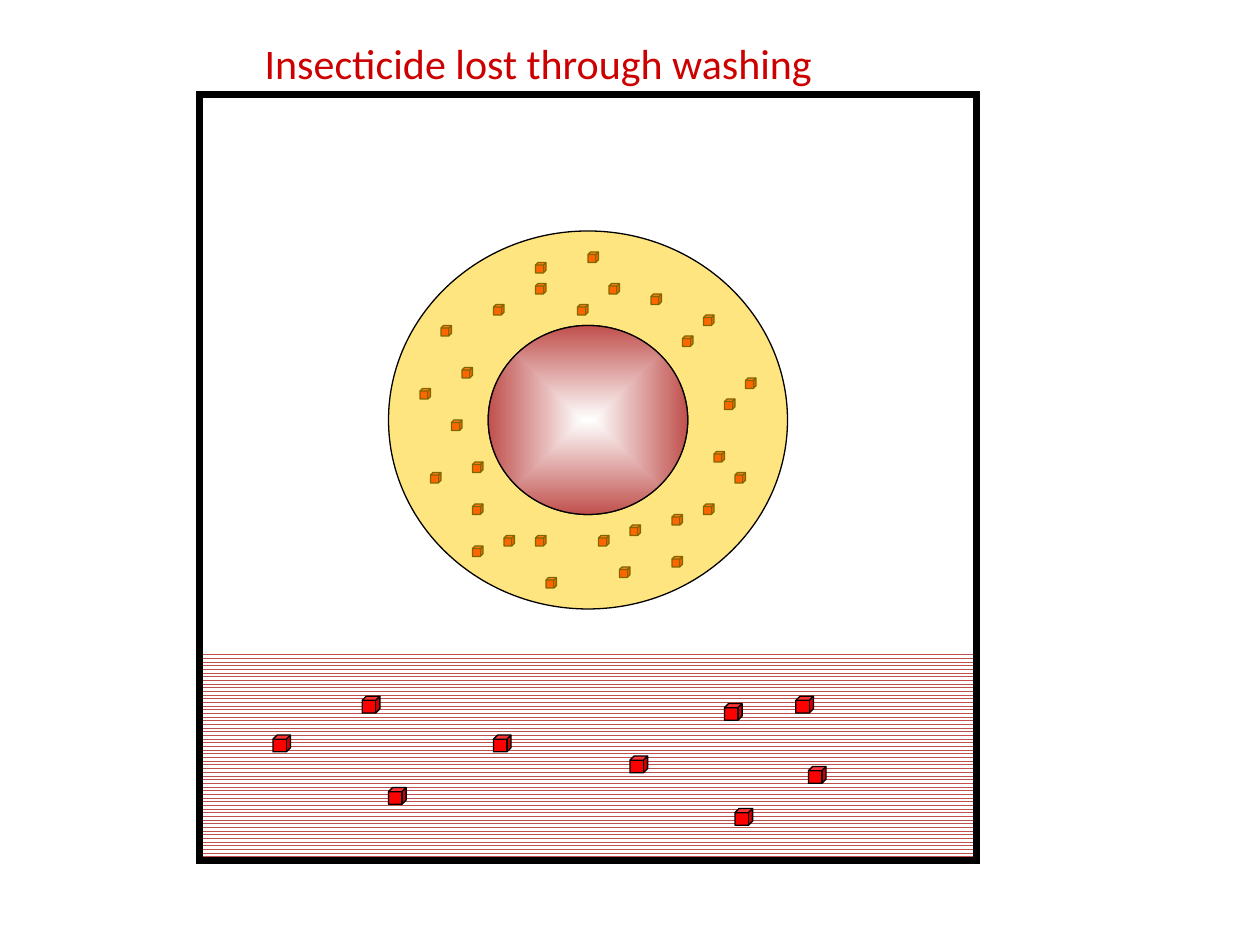
"""Builds a slide showing insecticide washed out of a coated fibre."""
from lxml import etree
from pptx import Presentation
from pptx.dml.color import RGBColor
from pptx.enum.dml import MSO_PATTERN
from pptx.enum.shapes import MSO_SHAPE
from pptx.enum.text import MSO_ANCHOR, MSO_AUTO_SIZE, PP_ALIGN
from pptx.oxml import parse_xml
from pptx.oxml.ns import nsdecls, qn
from pptx.util import Inches, Pt

RECTANGLE, OVAL, CUBE = MSO_SHAPE.RECTANGLE, MSO_SHAPE.OVAL, MSO_SHAPE.CUBE
ZIG_ZAG = MSO_PATTERN.ZIG_ZAG
LEFT, MIDDLE, NO_FIT = PP_ALIGN.LEFT, MSO_ANCHOR.MIDDLE, MSO_AUTO_SIZE.NONE
UNIT = Inches(1) / 12
BLACK, WHITE, RED, BRICK, YELLOW = "000000", "FFFFFF", "FF0000", "C0504D", "FFCC00"


def color(value):
    return RGBColor.from_string(value)


def add_outlined(shapes, kind, left, top, width, height, fill=None, weight=0.75):
    box = [round(value * UNIT) for value in (left, top, width, height)]
    shape = shapes.add_shape(kind, *box)
    shape.shadow.inherit = False
    shape.line.color.rgb = color(BLACK)
    shape.line.width = Pt(weight)
    if fill:
        shape.fill.solid()
        shape.fill.fore_color.rgb = color(fill)
    else:
        shape.fill.background()
    return shape


presentation = Presentation()
presentation.slide_width = Inches(10)
presentation.slide_height = Inches(7.5)
slide = presentation.slides.add_slide(presentation.slide_layouts[5])

title = slide.shapes.title
title.left, title.top, title.width, title.height = [round(n * UNIT) for n in (24, 3, 71, 6)]
title.text_frame.text = "Insecticide lost through washing"
title.text_frame.auto_size = NO_FIT
title.text_frame.vertical_anchor = MIDDLE
paragraph = title.text_frame.paragraphs[0]
paragraph.alignment = LEFT
font = paragraph.runs[0].font
font.size, font.name = Pt(24), "Calibri"
font.color.rgb = color("CC0000")

wash = slide.shapes.add_group_shape().shapes
water = add_outlined(wash, RECTANGLE, 19, 62, 74, 20)
water.line.fill.background()
water.fill.patterned()
water.fill.pattern = ZIG_ZAG
water.fill.fore_color.rgb = color(BRICK)
water.fill.back_color.rgb = color(WHITE)

lost_cubes = [(77, 73), (69, 67), (75.8, 66.3), (60, 72), (70, 77),
              (47, 70), (37, 75), (26, 70), (34.5, 66.3)]
for left, top in lost_cubes:
    add_outlined(wash, CUBE, left, top, 1.68, 1.6, RED)

frame = add_outlined(slide.shapes, RECTANGLE, 19, 9, 74, 73, weight=4)
etree.SubElement(frame.element.spPr.find(qn("a:ln")), qn("a:miter"), lim="800000")

fibre = slide.shapes.add_group_shape().shapes
held_cubes = [
    (68, 43), (65, 32), (71, 36), (64, 49), (62, 28), (44, 35), (67, 30), (59, 54),
    (51, 51), (45, 48), (47, 29), (58, 27), (52, 55), (60, 50), (43, 40), (51, 27),
    (41, 45), (42, 31), (67, 48), (64, 53), (45, 52), (56, 24), (69, 38), (70, 45),
    (57, 51), (40, 37), (51, 25), (55, 29), (45, 44), (48, 51)]
for left, top in held_cubes:
    add_outlined(fibre, CUBE, left, top, 1, 1, RED)

center_x, center_y, radius_x, radius_y = 56, 40, 19, 18
west, north, east, south = (-1, 0), (0, -1), (1, 0), (0, 1)
builder = fibre.build_freeform((center_x - radius_x) * UNIT, center_y * UNIT)
builder.add_line_segments(
    [((center_x + x * radius_x) * UNIT, (center_y + y * radius_y) * UNIT)
     for x, y in (north, east, south)])
coating = builder.convert_to_shape()
coating.shadow.inherit = False
coating.line.color.rgb = color(BLACK)
coating.line.width = Pt(0.75)
coating.fill.solid()
coating.fill.fore_color.rgb = color(YELLOW)
coating_color = coating.element.spPr.find(qn("a:solidFill"))[0]
etree.SubElement(coating_color, qn("a:alpha"), val="50000")

outline = next(coating.element.iter(qn("a:path")))
for segment in list(outline):
    outline.remove(segment)
outline.set("w", str(200 * radius_x))
outline.set("h", str(200 * radius_y))
rings = [(1, (west, north, east, south, west)), (0.5, (west, south, east, north, west))]
for share, corners in rings:
    segments = [("a:moveTo", [west])]
    for (x1, y1), (x2, y2) in zip(corners, corners[1:]):
        segments.append(("a:cubicBezTo", [(x1 + 0.55 * x2, y1 + 0.55 * y2),
                                          (x2 + 0.55 * x1, y2 + 0.55 * y1), (x2, y2)]))
    for tag, points in segments + [("a:close", [])]:
        segment = etree.SubElement(outline, qn(tag))
        for x, y in points:
            etree.SubElement(segment, qn("a:pt"),
                             x=str(round(100 * radius_x * (1 + share * x))),
                             y=str(round(100 * radius_y * (1 + share * y))))

core = add_outlined(fibre, OVAL, center_x - radius_x / 2, center_y - radius_y / 2,
                    radius_x, radius_y)
core.fill.gradient()
for stop, position, value in zip(core.fill.gradient_stops, (0, 1), (WHITE, BRICK)):
    stop.position = position
    stop.color.rgb = color(value)
gradient = core.element.spPr.find(qn("a:gradFill"))
gradient.replace(gradient.find(qn("a:lin")), parse_xml(
    f'<a:path {nsdecls("a")} path="shape">'
    '<a:fillToRect l="50000" t="50000" r="50000" b="50000"/></a:path>'))

presentation.save("out.pptx")
